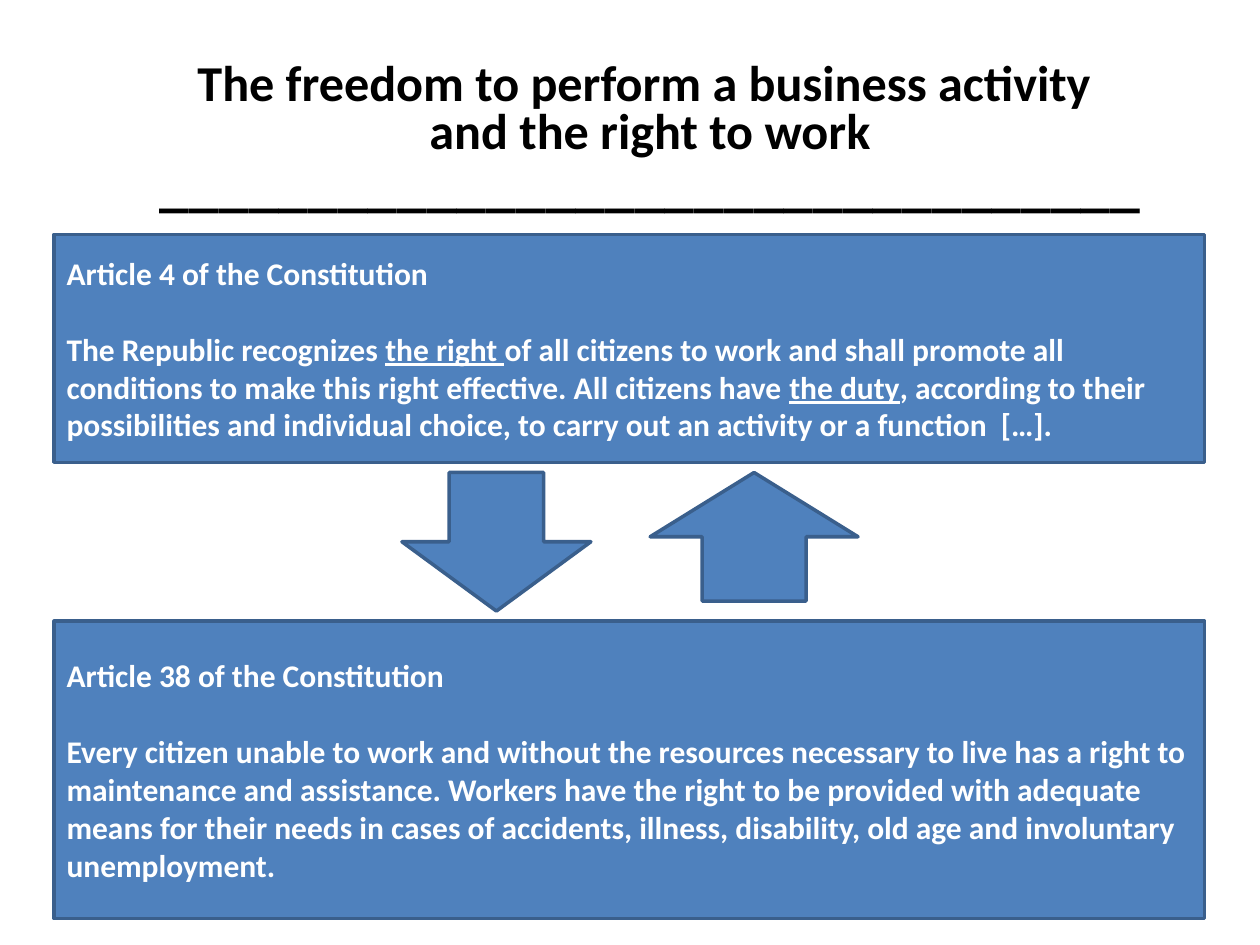
import pptx
import pptx.dml.color
import pptx.enum.shapes
import pptx.enum.text
import pptx.util
from pptx.util import Inches

SHAPE = pptx.enum.shapes.MSO_SHAPE
ALIGN = pptx.enum.text.PP_ALIGN
MIDDLE = pptx.enum.text.MSO_ANCHOR.MIDDLE


def colour(hex_code):
    return pptx.dml.color.RGBColor.from_string(hex_code)


class SlideBuilder:
    FONT = "Calibri"
    FILL, OUTLINE = "4F81BD", "3A5F8C"
    TITLE_COLOUR, BODY_COLOUR = "000000", "FFFFFF"
    BODY_SIZE = 18
    HEADING_GAP = 22

    def __init__(self, slide):
        self.slide = slide

    def style(self, paragraph, size, hex_code, align):
        paragraph.alignment = align
        font = paragraph.font
        font.name, font.bold = self.FONT, True
        font.size = pptx.util.Pt(size)
        font.color.rgb = colour(hex_code)

    def paragraphs(self, frame, count):
        """Prepare a wrapped, middle-anchored frame and return its paragraphs."""
        frame.word_wrap = True
        frame.vertical_anchor = MIDDLE
        for _ in range(count - 1):
            frame.add_paragraph()
        return frame.paragraphs

    def title(self, left, top, width, height, lines):
        box = self.slide.shapes.add_textbox(
            Inches(left), Inches(top), Inches(width), Inches(height))
        paragraphs = self.paragraphs(box.text_frame, len(lines))
        for paragraph, (text, size) in zip(paragraphs, lines):
            paragraph.add_run().text = text
            paragraph.line_spacing = 0.8
            self.style(paragraph, size, self.TITLE_COLOUR, ALIGN.CENTER)

    def block(self, kind, left, top, width, height):
        shape = self.slide.shapes.add_shape(
            kind, Inches(left), Inches(top), Inches(width), Inches(height))
        shape.shadow.inherit = False
        shape.fill.solid()
        shape.fill.fore_color.rgb = colour(self.FILL)
        shape.line.color.rgb = colour(self.OUTLINE)
        shape.line.width = pptx.util.Pt(2)
        return shape

    def article(self, top, height, heading, body):
        """Draw an article panel; body paragraphs are lists of (text, underlined)."""
        panel = self.block(SHAPE.RECTANGLE, 0.43, top, 9.13, height)
        content = [[(heading, False)]] + body
        paragraphs = self.paragraphs(panel.text_frame, len(content))
        for paragraph, pieces in zip(paragraphs, content):
            self.style(paragraph, self.BODY_SIZE, self.BODY_COLOUR, ALIGN.LEFT)
            for text, underlined in pieces:
                run = paragraph.add_run()
                run.text = text
                if underlined:
                    run.font.underline = True
        paragraphs[0].space_after = pptx.util.Pt(self.HEADING_GAP)


def main():
    presentation = pptx.Presentation()
    presentation.slide_width, presentation.slide_height = Inches(10), Inches(7.5)
    builder = SlideBuilder(
        presentation.slides.add_slide(presentation.slide_layouts[6]))

    builder.title(0.91, 0.36, 8.5, 1.5, [
        ("The freedom to perform a business activity ", 28.7),
        ("and the right to work", 28.7),
        ("_" * 33, 34.1),
    ])
    builder.article(1.86, 1.81, "Article 4 of the Constitution", [[
        ("The Republic recognizes ", False),
        ("the right ", True),
        ("of all citizens to work and shall promote all conditions to make "
         "this right effective. All citizens have ", False),
        ("the duty", True),
        (", according to their possibilities and individual choice, to carry "
         "out an activity or a function  […].", False),
    ]])
    builder.article(4.93, 2.36, "Article 38 of the Constitution", [
        [("Every citizen unable to work and without the resources necessary "
          "to live has a right to", False)],
        [("maintenance and assistance. Workers have the right to be provided "
          "with adequate means for their needs in cases of accidents, illness, "
          "disability, old age and involuntary unemployment.", False)],
    ])
    builder.block(SHAPE.DOWN_ARROW, 3.19, 3.75, 1.5, 1.1)
    builder.block(SHAPE.UP_ARROW, 5.16, 3.75, 1.65, 1.02)

    presentation.save("out.pptx")


if __name__ == "__main__":
    main()
